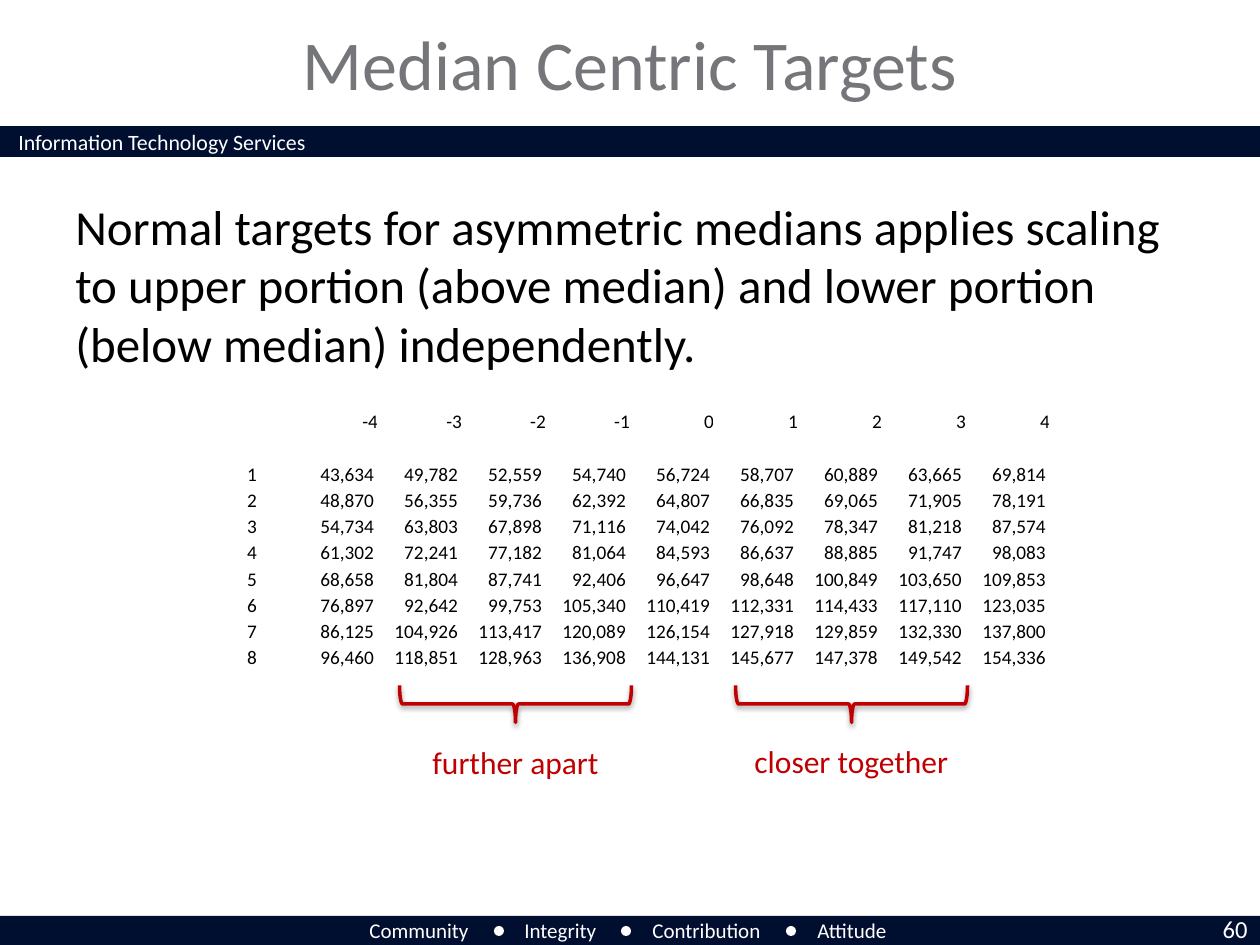
import lxml.etree
import pptx
import pptx.dml.color
import pptx.enum.shapes
import pptx.enum.text
import pptx.oxml.ns
import pptx.util

SCALE = 914400 / 126
SHAPE = pptx.enum.shapes.MSO_SHAPE
ALIGN = pptx.enum.text.PP_ALIGN
ANCHOR = pptx.enum.text.MSO_ANCHOR
NAVY, WHITE, BLACK, GREY, RED = "000E2F", "FFFFFF", "000000", "747679", "C00000"
HEADS = [str(n) for n in range(-4, 5)]
SALARIES = """
43,634 49,782 52,559 54,740 56,724 58,707 60,889 63,665 69,814
48,870 56,355 59,736 62,392 64,807 66,835 69,065 71,905 78,191
54,734 63,803 67,898 71,116 74,042 76,092 78,347 81,218 87,574
61,302 72,241 77,182 81,064 84,593 86,637 88,885 91,747 98,083
68,658 81,804 87,741 92,406 96,647 98,648 100,849 103,650 109,853
76,897 92,642 99,753 105,340 110,419 112,331 114,433 117,110 123,035
86,125 104,926 113,417 120,089 126,154 127,918 129,859 132,330 137,800
96,460 118,851 128,963 136,908 144,131 145,677 147,378 149,542 154,336
"""


def px(n):
    """Turn whole pixels into EMU."""
    return pptx.util.Emu(round(n * SCALE))


def rgb(color):
    """Turn a hex string into a colour."""
    return pptx.dml.color.RGBColor.from_string(color)


def apply(obj, values):
    """Set attributes from a dict of format values."""
    for name, value in values.items():
        setattr(obj, name, value)


def add_child(parent, tag, **attrs):
    """Append a drawing element with its attributes."""
    return lxml.etree.SubElement(parent, pptx.oxml.ns.qn(tag), attrs)


def write(p, text, size, color, align=ALIGN.LEFT):
    """Write one formatted run into a paragraph."""
    p.alignment = align
    r = p.add_run()
    r.text = text
    apply(r.font, {"name": "Calibri", "size": pptx.util.Pt(size)})
    r.font.color.rgb = rgb(color)


def add_text(s, box, text, size, color, wrap=True, align=ALIGN.LEFT, anchor=ANCHOR.TOP):
    """Add a text box."""
    tf = s.shapes.add_textbox(*map(px, box)).text_frame
    apply(tf, {"word_wrap": wrap, "vertical_anchor": anchor})
    write(tf.paragraphs[0], text, size, color, align)


def add_solid(s, kind, box, color):
    """Add a filled shape without outline."""
    sp = s.shapes.add_shape(kind, *map(px, box))
    sp.shadow.inherit = False
    sp.fill.solid()
    sp.fill.fore_color.rgb = rgb(color)
    sp.line.fill.background()


def add_brace(s, box):
    """Add a downward brace with a soft shadow."""
    sp = s.shapes.add_shape(SHAPE.RIGHT_BRACE, *map(px, box))
    sp.rotation = 90
    sp.fill.background()
    sp.line.color.rgb = rgb(RED)
    sp.line.width = pptx.util.Pt(2)
    sp.shadow.inherit = False
    effects = sp._element.spPr.find(pptx.oxml.ns.qn("a:effectLst"))
    shadow = add_child(effects, "a:outerShdw", blurRad="40000", dist="20000",
                       dir="5400000", rotWithShape="0")
    add_child(add_child(shadow, "a:srgbClr", val=BLACK), "a:alpha", val="38000")


def fill_cell(cell, text, align, right):
    """Format one table cell and write its text."""
    apply(cell, {"margin_left": 0, "margin_top": 0, "margin_bottom": 0,
                 "margin_right": px(right), "vertical_anchor": ANCHOR.BOTTOM})
    cell.fill.background()
    p = cell.text_frame.paragraphs[0]
    if text:
        write(p, text, 11, BLACK, align)
    else:
        add_child(p._p, "a:endParaRPr", sz="1100")


def add_targets(s, box):
    """Add the table of targets by grade and step."""
    values = [line.split() for line in SALARIES.strip().splitlines()]
    rows = [[""] + HEADS, [""] * 10]
    rows += [[str(i)] + row for i, row in enumerate(values, 1)]
    table = s.shapes.add_table(len(rows), len(rows[0]), *map(px, box)).table
    apply(table, {"first_row": False, "horz_banding": False})
    for i, row in enumerate(rows):
        for j, text in enumerate(row):
            align = ALIGN.RIGHT if j else ALIGN.CENTER
            fill_cell(table.cell(i, j), text, align, 4 if i and j else 0)


def main():
    """Build the slide."""
    prs = pptx.Presentation()
    apply(prs, {"slide_width": px(1260), "slide_height": px(945)})
    s = prs.slides.add_slide(prs.slide_layouts[6])
    for top in (126, 916):
        add_solid(s, SHAPE.RECTANGLE, (0, top, 1260, 31), NAVY)
    add_text(s, (6, 122, 428, 40), "Information Technology Services", 12.5, WHITE)
    for left, width, text in ((357, 126, "Community"), (512, 101, "Integrity"),
                              (640, 139, "Contribution"), (805, 98, "Attitude")):
        add_text(s, (left, 911, width, 38), text, 12, WHITE, wrap=False)
    for left in (494, 621, 786):
        add_solid(s, SHAPE.OVAL, (left, 926, 10, 10), WHITE)
    add_text(s, (1164, 908, 96, 43), "60", 14, WHITE, align=ALIGN.RIGHT)
    add_text(s, (126, 13, 1008, 100), "Median Centric Targets", 40, GREY,
             align=ALIGN.CENTER, anchor=ANCHOR.MIDDLE)
    add_text(s, (63, 190, 1134, 693),
             "Normal targets for asymmetric medians applies scaling to upper portion "
             "(above median) and lower portion (below median) independently.", 28, BLACK)
    add_targets(s, (210, 408, 840, 262))
    for left in (497, 833):
        add_brace(s, (left, 588, 37, 232))
    add_text(s, (420, 737, 194, 50), "further apart", 18, RED, wrap=False)
    add_text(s, (742, 736, 222, 50), "closer together", 18, RED, wrap=False)
    prs.save("out.pptx")


if __name__ == "__main__":
    main()
